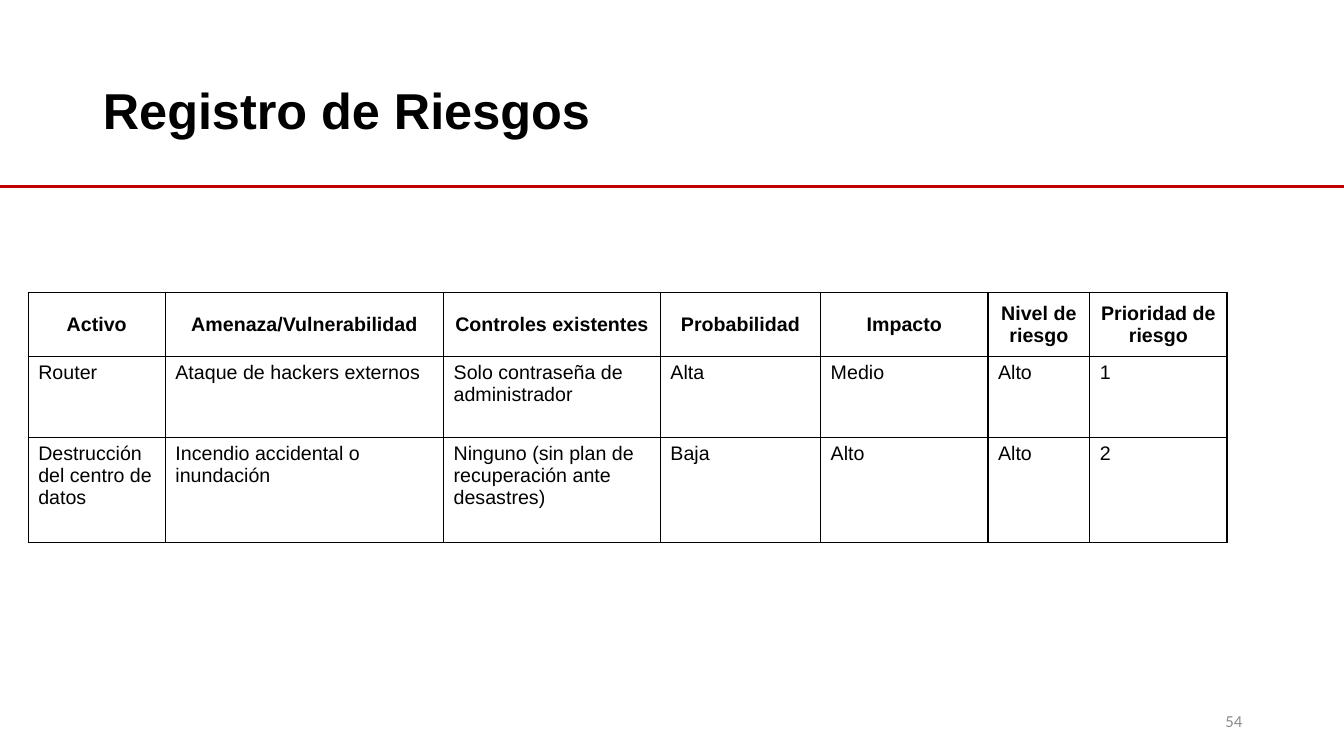
from lxml import etree
from pptx import Presentation
from pptx.dml.color import RGBColor
from pptx.enum.shapes import MSO_CONNECTOR
from pptx.enum.text import MSO_ANCHOR, PP_ALIGN
from pptx.oxml.ns import qn
from pptx.util import Pt

PX = 9144
BLACK = RGBColor(0x00, 0x00, 0x00)
RED = RGBColor(0xC0, 0x00, 0x00)
GRAY = RGBColor(0x8C, 0x8C, 0x8C)
LEFT, CENTER, RIGHT = PP_ALIGN.LEFT, PP_ALIGN.CENTER, PP_ALIGN.RIGHT
TOP, MIDDLE = MSO_ANCHOR.TOP, MSO_ANCHOR.MIDDLE
STRAIGHT = MSO_CONNECTOR.STRAIGHT

COLS = [136, 276, 215, 159, 166, 101, 136]
ROWS = [64, 80, 104]
RISKS = [
    ["Activo", "Amenaza/Vulnerabilidad", "Controles existentes",
     "Probabilidad", "Impacto", "Nivel de riesgo", "Prioridad de riesgo"],
    ["Router", "Ataque de hackers externos", "Solo contraseña de administrador",
     "Alta", "Medio", "Alto", "1"],
    ["Destrucción del centro de datos", "Incendio accidental o inundación",
     "Ninguno (sin plan de recuperación ante desastres)",
     "Baja", "Alto", "Alto", "2"],
]


def scale(*sizes):
    return [size * PX for size in sizes]


def write(frame, text, size=14, font="Arial", color=BLACK, bold=False,
          align=LEFT, anchor=TOP):
    frame.word_wrap = True
    frame.vertical_anchor = anchor
    para = frame.paragraphs[0]
    para.alignment = align
    run = para.add_run()
    run.text = text
    run.font.size = Pt(size)
    run.font.name = font
    run.font.bold = bold
    run.font.color.rgb = color
    return para


def add_title(slide, text):
    title = slide.shapes.title
    title.left, title.top, title.width, title.height = scale(92, 40, 1150, 145)
    para = write(title.text_frame, text, size=36, bold=True, anchor=MIDDLE)
    para.line_spacing = 0.9


def add_rule(slide, y):
    rule = slide.shapes.add_connector(STRAIGHT, *scale(0, y, 1333, y))
    rule.line.color.rgb = RED
    rule.line.width = Pt(2.25)
    etree.SubElement(rule._element.spPr, qn("a:effectLst"))


def add_edges(cell):
    props = cell._tc.get_or_add_tcPr()
    for side in ("lnL", "lnR", "lnT", "lnB"):
        edge = etree.SubElement(props, qn("a:" + side), w=str(Pt(1)))
        fill = etree.SubElement(edge, qn("a:solidFill"))
        etree.SubElement(fill, qn("a:srgbClr"), val=str(BLACK))


def add_grid(slide, left, top):
    place = scale(left, top, sum(COLS), sum(ROWS))
    table = slide.shapes.add_table(len(ROWS), len(COLS), *place).table
    table.horz_banding = False
    for col, width in zip(table.columns, COLS):
        col.width = width * PX
    for r, (row, height) in enumerate(zip(table.rows, ROWS)):
        row.height = height * PX
        head = r == 0
        for cell, text in zip(row.cells, RISKS[r]):
            add_edges(cell)
            cell.fill.background()
            write(cell.text_frame, text, bold=head,
                  align=CENTER if head else LEFT)
            cell.vertical_anchor = MIDDLE if head else TOP


def add_number(slide, text):
    box = slide.shapes.add_textbox(*scale(942, 695, 300, 40))
    write(box.text_frame, text, size=12, font="Calibri", color=GRAY,
          align=RIGHT, anchor=MIDDLE)


def main():
    deck = Presentation()
    deck.slide_width, deck.slide_height = scale(1333, 750)
    slide = deck.slides.add_slide(deck.slide_layouts[5])
    add_rule(slide, 185)
    add_title(slide, "Registro de Riesgos")
    add_grid(slide, 28, 290)
    add_number(slide, "54")
    deck.save("out.pptx")


if __name__ == "__main__":
    main()
